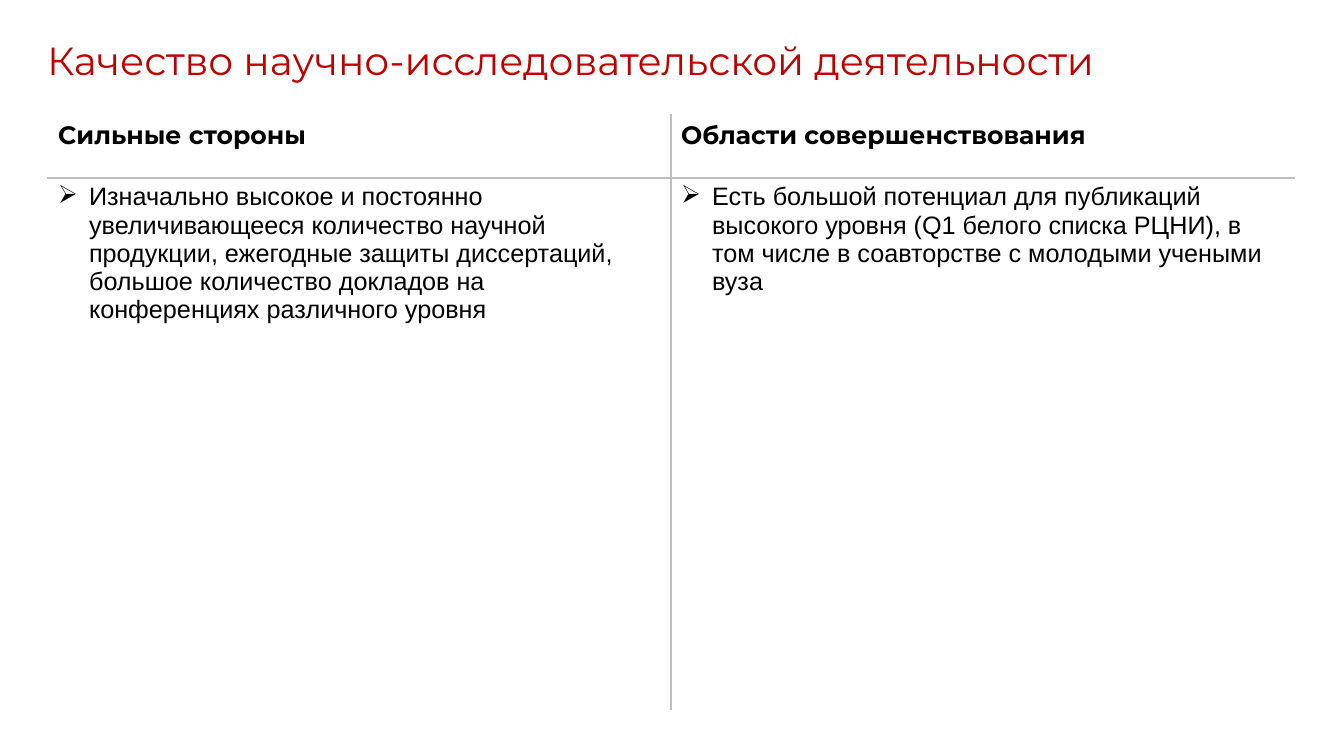
from lxml import etree
from pptx import Presentation
from pptx import util as u
from pptx.dml.color import RGBColor
from pptx.enum import text
from pptx.oxml.ns import qn

PX = 12192000 / 1344
RED = RGBColor(0xC0, 0x00, 0x00)
BLACK = RGBColor(0x00, 0x00, 0x00)
GRAY = RGBColor(0xBF, 0xBF, 0xBF)
WHITE = RGBColor(0xFF, 0xFF, 0xFF)


def px(length):
    return u.Emu(round(length * PX))


def write(paragraph, content, name, size, color, bold):
    run = paragraph.add_run()
    run.text = content
    for key, value in {"name": name, "size": u.Pt(size), "bold": bold}.items():
        setattr(run.font, key, value)
    run.font.color.rgb = color


presentation = Presentation()
presentation.slide_width = px(1344)
presentation.slide_height = px(756)
slide = presentation.slides.add_slide(presentation.slide_layouts[5])

title = slide.shapes.title
for key, value in {"left": 37, "top": 31, "width": 1174, "height": 57}.items():
    setattr(title, key, px(value))
frame_format = {
    "word_wrap": True,
    "auto_size": text.MSO_AUTO_SIZE.NONE,
    "vertical_anchor": text.MSO_ANCHOR.TOP,
}
for key, value in frame_format.items():
    setattr(title.text_frame, key, value)
heading = title.text_frame.paragraphs[0]
heading.alignment = text.PP_ALIGN.LEFT
write(heading, "Качество научно-исследовательской деятельности", "Montserrat", 28, RED, False)

ROWS = [
    ["Сильные стороны", "Области совершенствования"],
    [
        "Изначально высокое и постоянно увеличивающееся количество научной продукции, "
        "ежегодные защиты диссертаций, большое количество докладов на конференциях "
        "различного уровня",
        "Есть большой потенциал для публикаций высокого уровня (Q1 белого списка РЦНИ), "
        "в том числе в соавторстве с молодыми учеными вуза",
    ],
]
ROW_FORMATS = [("Montserrat", 18, BLACK, True), ("Arial", 18, BLACK, False)]

table = slide.shapes.add_table(2, 2, px(48), px(115), px(1246), px(596)).table
table.first_row = False
table.horz_banding = False
for column in table.columns:
    column.width = px(623)
for row, height in zip(table.rows, (63, 533)):
    row.height = px(height)

for row_index, contents in enumerate(ROWS):
    for column_index, content in enumerate(contents):
        cell = table.cell(row_index, column_index)
        cell.fill.background()
        paragraph = cell.text_frame.paragraphs[0]
        write(paragraph, content, *ROW_FORMATS[row_index])
        if row_index == 1:
            properties = paragraph._p.get_or_add_pPr()
            properties.set("marL", str(px(31)))
            properties.set("indent", str(-px(31)))
            etree.SubElement(properties, qn("a:buChar")).set("char", "➢")

        inner_edges = ("R" if column_index == 0 else "L", "B" if row_index == 0 else "T")
        cell_properties = cell._tc.get_or_add_tcPr()
        for position, edge in enumerate("LRTB"):
            border = etree.Element(qn(f"a:ln{edge}"), w=str(u.Pt(1)))
            fill = etree.SubElement(border, qn("a:solidFill"))
            color = GRAY if edge in inner_edges else WHITE
            etree.SubElement(fill, qn("a:srgbClr")).set("val", str(color))
            cell_properties.insert(position, border)

presentation.save("out.pptx")
